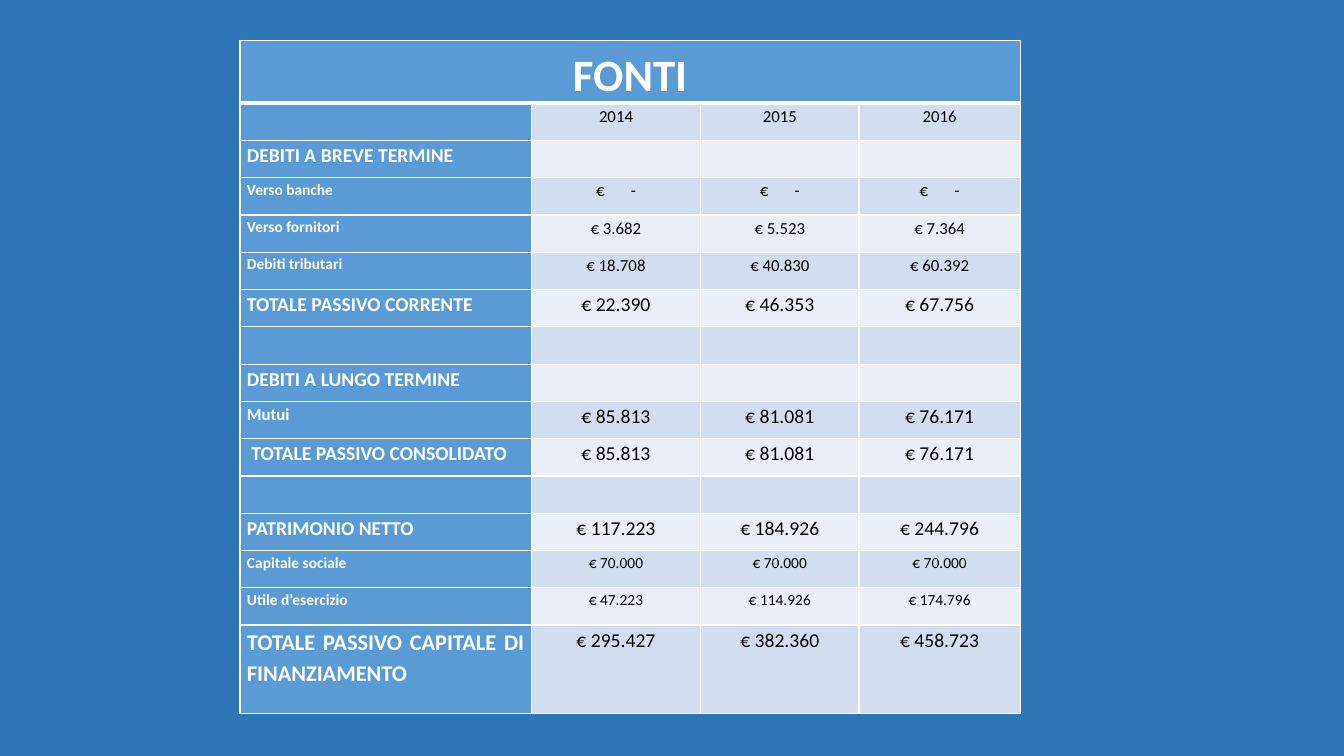
from lxml.etree import SubElement
from pptx import Presentation
from pptx.dml.color import RGBColor
from pptx.enum.text import PP_ALIGN as Align
from pptx.oxml.ns import qn
from pptx.util import Inches, Pt

FONT = "Calibri"
WHITE, BLACK = "FFFFFF", "000000"
BACKGROUND, HEADER_BLUE = "2E75B6", "5B9BD5"
BANDS = ["D2DEEF", "EAEFF7"]

COLUMN_WIDTHS = [2.89, 1.68, 1.57, 1.6]
TITLE_HEIGHT, ROW_HEIGHT, TOTAL_HEIGHT = 0.55, 0.37, 0.88
NO_DEBT = "€ -"

# Label, label size, yearly values, value size
ROWS = [
    ("", 14, ["2014", "2015", "2016"], 12),
    ("DEBITI A BREVE TERMINE", 14, [""] * 3, 12),
    ("Verso banche", 11, [NO_DEBT] * 3, 12),
    ("Verso fornitori", 11, ["€ 3.682", "€ 5.523", "€ 7.364"], 12),
    ("Debiti tributari", 11, ["€ 18.708", "€ 40.830", "€ 60.392"], 12),
    ("TOTALE PASSIVO CORRENTE", 14, ["€ 22.390", "€ 46.353", "€ 67.756"], 14),
    ("", 14, [""] * 3, 14),
    ("DEBITI A LUNGO TERMINE", 14, [""] * 3, 14),
    ("Mutui", 12, ["€ 85.813", "€ 81.081", "€ 76.171"], 14),
    (" TOTALE PASSIVO CONSOLIDATO", 14, ["€ 85.813", "€ 81.081", "€ 76.171"], 14),
    ("", 14, [""] * 3, 14),
    ("PATRIMONIO NETTO", 14, ["€ 117.223", "€ 184.926", "€ 244.796"], 14),
    ("Capitale sociale", 11, ["€ 70.000"] * 3, 11),
    ("Utile d’esercizio", 11, ["€ 47.223", "€ 114.926", "€ 174.796"], 11),
    ("TOTALE PASSIVO CAPITALE DI FINANZIAMENTO", 16,
     ["€ 295.427", "€ 382.360", "€ 458.723"], 14),
]


def color(value):
    return RGBColor.from_string(value)


def set_borders(cell, top=1, bottom=1):
    properties = cell._tc.get_or_add_tcPr()
    for side, width in (("L", 1), ("R", 1), ("T", top), ("B", bottom)):
        line = SubElement(properties, qn(f"a:ln{side}"), w=str(Pt(width)))
        fill = SubElement(line, qn("a:solidFill"))
        SubElement(fill, qn("a:srgbClr"), val=WHITE)


def style_cell(cell, fill, top=1, bottom=1):
    cell.margin_left = cell.margin_right = Inches(0.07)
    cell.margin_top = cell.margin_bottom = 0
    set_borders(cell, top, bottom)
    cell.fill.solid()
    cell.fill.fore_color.rgb = color(fill)


def write_cell(cell, text, size, ink, bold, align):
    para = cell.text_frame.paragraphs[0]
    para.alignment = align
    para.line_spacing = 1.15
    # The dash stands apart from the euro sign through letter spacing
    pieces = list(text) if text == NO_DEBT else [text] if text else []
    for piece in pieces:
        span = para.add_run()
        span.text = piece
        span.font.name = FONT
        span.font.size = Pt(size)
        span.font.bold = bold
        span.font.color.rgb = color(ink)
        if piece == " ":
            span.font._element.set("spc", "1600")


def add_sources_table(page):
    heights = [TITLE_HEIGHT] + [ROW_HEIGHT] * (len(ROWS) - 1) + [TOTAL_HEIGHT]
    table = page.shapes.add_table(
        len(heights), len(COLUMN_WIDTHS), Inches(2.38), Inches(0.4),
        Inches(sum(COLUMN_WIDTHS)), Inches(sum(heights))).table
    for column, width in zip(table.columns, COLUMN_WIDTHS):
        column.width = Inches(width)
    for row, height in zip(table.rows, heights):
        row.height = Inches(height)

    # Title row across all columns
    for cell in table.rows[0].cells:
        style_cell(cell, HEADER_BLUE, bottom=3)
    title = table.cell(0, 0)
    title.merge(table.cell(0, len(COLUMN_WIDTHS) - 1))
    write_cell(title, "FONTI", 32, WHITE, True, Align.CENTER)

    # Labels on the left, banded yearly values on the right
    for index, (label, label_size, values, value_size) in enumerate(ROWS):
        top = 3 if index == 0 else 1
        label_cell, *value_cells = table.rows[index + 1].cells
        style_cell(label_cell, HEADER_BLUE, top)
        write_cell(label_cell, label, label_size, WHITE, True, Align.JUSTIFY)
        for cell, value in zip(value_cells, values):
            style_cell(cell, BANDS[index % 2], top)
            write_cell(cell, value, value_size, BLACK, False, Align.CENTER)


def main():
    deck = Presentation()
    deck.slide_width, deck.slide_height = Inches(13.33), Inches(7.5)
    page = deck.slides.add_slide(deck.slide_layouts[6])
    page.background.fill.solid()
    page.background.fill.fore_color.rgb = color(BACKGROUND)
    add_sources_table(page)
    deck.save("out.pptx")


if __name__ == "__main__":
    main()
